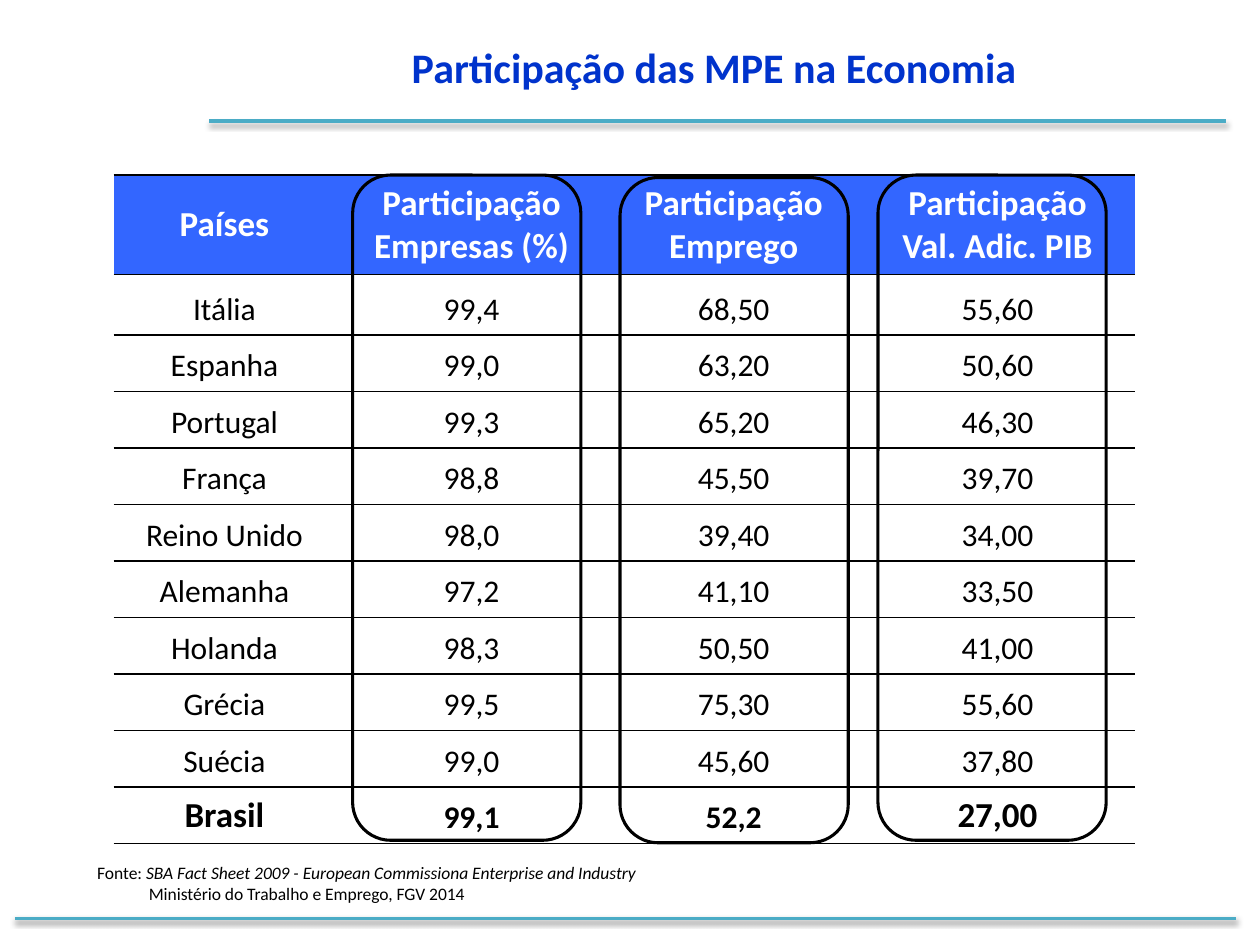
from lxml.etree import SubElement
from pptx import Presentation
from pptx.dml.color import RGBColor
from pptx.enum.shapes import MSO_CONNECTOR, MSO_SHAPE
from pptx.enum.text import MSO_ANCHOR, MSO_AUTO_SIZE, PP_ALIGN
from pptx.oxml import parse_xml
from pptx.oxml.ns import nsdecls, qn
from pptx.util import Cm, Pt

FONT = "Calibri"
BLACK, WHITE, TEAL = "000000", "FFFFFF", "4BACC6"
HEADER_BLUE, TITLE_BLUE = "3366FF", "0033CC"
HANGING = 342900  # EMU

HEADERS = [["Países"], ["Participação", "Empresas (%)"],
           ["Participação Emprego"], ["Participação", "Val. Adic. PIB"]]
COUNTRIES = [
    ["Itália", "99,4", "68,50", "55,60"],
    ["Espanha", "99,0", "63,20", "50,60"],
    ["Portugal", "99,3", "65,20", "46,30"],
    ["França", "98,8", "45,50", "39,70"],
    ["Reino Unido", "98,0", "39,40", "34,00"],
    ["Alemanha", "97,2", "41,10", "33,50"],
    ["Holanda", "98,3", "50,50", "41,00"],
    ["Grécia", "99,5", "75,30", "55,60"],
    ["Suécia", "99,0", "45,60", "37,80"],
    ["Brasil", "99,1", "52,2", "27,00"],
]
COLUMN_WIDTHS = [4.47, 5.49, 5.08, 5.56]
ROW_HEIGHTS = [2.0, 1.22] + [1.14] * 9
HIGHLIGHTS = [(7.11, 3.53), (12.5, 3.58), (17.7, 3.53)]


def rgb(color):
    return RGBColor.from_string(color)


def add_run(paragraph, text, size, color=BLACK, bold=False, italic=False):
    run = paragraph.add_run()
    run.text = text
    font = run.font
    font.name, font.size = FONT, Pt(size)
    font.bold, font.italic = bold, italic
    font.color.rgb = rgb(color)


def add_rule(slide, left, right, y):
    """Draw a horizontal teal line with a soft shadow below it."""
    rule = slide.shapes.add_connector(
        MSO_CONNECTOR.STRAIGHT, Cm(left), Cm(y), Cm(right), Cm(y))
    rule.line.color.rgb = rgb(TEAL)
    rule.line.width = Pt(2)
    rule._element.spPr.append(parse_xml(
        f'<a:effectLst {nsdecls("a")}><a:outerShdw blurRad="40000" dist="20000" '
        'dir="5400000" rotWithShape="0"><a:srgbClr val="000000">'
        '<a:alpha val="38000"/></a:srgbClr></a:outerShdw></a:effectLst>'))


def set_title(slide):
    title = slide.shapes.title
    title.left, title.top, title.width, title.height = (
        Cm(4.11), Cm(0.71), Cm(20.57), Cm(1.27))
    title.text_frame.auto_size = MSO_AUTO_SIZE.NONE
    paragraph = title.text_frame.paragraphs[0]
    paragraph.alignment = PP_ALIGN.CENTER
    add_run(paragraph, "Participação das MPE na Economia", 24, TITLE_BLUE, bold=True)


def set_borders(cell):
    """Rule the cell above and below only."""
    properties = cell._tc.get_or_add_tcPr()
    for position, side in enumerate(("lnL", "lnR", "lnT", "lnB")):
        border = SubElement(properties, qn(f"a:{side}"), w=str(Pt(1)))
        if side in ("lnT", "lnB"):
            fill = SubElement(border, qn("a:solidFill"))
            SubElement(fill, qn("a:srgbClr"), val=BLACK)
        else:
            SubElement(border, qn("a:noFill"))
        properties.insert(position, border)


def fill_cell(cell, lines, size, color, bold, hanging=True):
    frame = cell.text_frame
    for index, line in enumerate(lines):
        paragraph = frame.add_paragraph() if index else frame.paragraphs[0]
        paragraph.alignment = PP_ALIGN.CENTER
        if hanging:
            properties = paragraph._p.get_or_add_pPr()
            properties.set("marL", str(HANGING))
            properties.set("indent", str(-HANGING))
        add_run(paragraph, line, size, color, bold)


def add_participation_table(slide):
    table = slide.shapes.add_table(
        len(ROW_HEIGHTS), len(COLUMN_WIDTHS), Cm(2.29), Cm(3.53),
        Cm(sum(COLUMN_WIDTHS)), Cm(sum(ROW_HEIGHTS))).table
    table.first_row = table.horz_banding = False
    for column, width in zip(table.columns, COLUMN_WIDTHS):
        column.width = Cm(width)
    for row, height in zip(table.rows, ROW_HEIGHTS):
        row.height = Cm(height)

    for c, lines in enumerate(HEADERS):
        cell = table.cell(0, c)
        cell.vertical_anchor = MSO_ANCHOR.MIDDLE
        cell.fill.solid()
        cell.fill.fore_color.rgb = rgb(HEADER_BLUE)
        fill_cell(cell, lines, 20, WHITE, True, hanging=c in (0, 3))
        set_borders(cell)
    for r, values in enumerate(COUNTRIES, start=1):
        brazil = values[0] == "Brasil"
        for c, value in enumerate(values):
            cell = table.cell(r, c)
            cell.vertical_anchor = MSO_ANCHOR.BOTTOM
            cell.fill.background()
            size = 20 if brazil and c in (0, 3) else 18
            fill_cell(cell, [value], size, BLACK, brazil)
            set_borders(cell)


def add_highlight(slide, left, top):
    outline = slide.shapes.add_shape(
        MSO_SHAPE.ROUNDED_RECTANGLE, Cm(left), Cm(top), Cm(4.6), Cm(13.41))
    outline.shadow.inherit = False
    outline.fill.background()
    outline.line.color.rgb = rgb(BLACK)
    outline.line.width = Pt(1.75)


def add_source_note(slide):
    frame = slide.shapes.add_textbox(
        Cm(1.91), Cm(17.32), Cm(11.07), Cm(0.91)).text_frame
    frame.word_wrap = False
    frame.margin_left = frame.margin_top = Cm(0.05)
    frame.margin_right = frame.margin_bottom = 0
    study = frame.paragraphs[0]
    add_run(study, "Fonte: ", 10)
    add_run(study, "SBA Fact Sheet 2009 - European Commissiona Enterprise and Industry",
            10, italic=True)
    ministry = frame.add_paragraph()
    ministry._p.get_or_add_pPr().set("marL", str(Cm(1.04)))
    add_run(ministry, "Ministério do Trabalho e Emprego, FGV 2014", 10)


def main():
    presentation = Presentation()
    presentation.slide_width, presentation.slide_height = Cm(25.4), Cm(19.05)
    slide = presentation.slides.add_slide(presentation.slide_layouts[5])
    add_rule(slide, 4.22, 24.71, 2.44)
    add_rule(slide, 0.3, 24.92, 18.52)
    set_title(slide)
    add_participation_table(slide)
    for left, top in HIGHLIGHTS:
        add_highlight(slide, left, top)
    add_source_note(slide)
    presentation.save("out.pptx")


if __name__ == "__main__":
    main()
